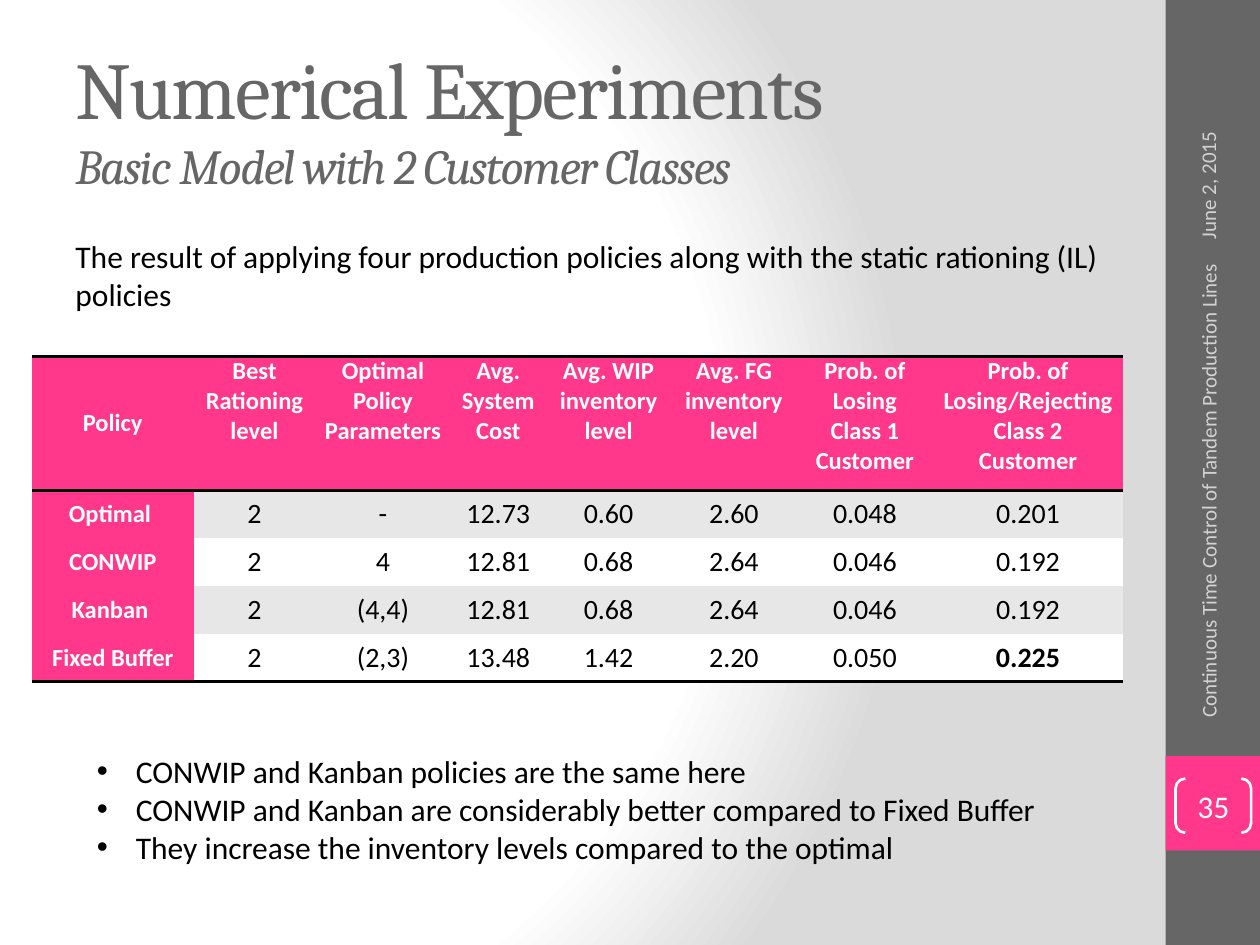
from pptx import Presentation
from pptx.dml.color import RGBColor
from pptx.enum.shapes import MSO_SHAPE as Shape
from pptx.enum.text import MSO_ANCHOR as Anchor, MSO_AUTO_SIZE as AutoSize, PP_ALIGN as Align
from pptx.oxml import parse_xml
from pptx.oxml.ns import nsdecls
from pptx.util import Inches, Pt

COLORS = {
    "pink": "FF388C", "gray": "666666", "pale": "D2D2D2", "band": "E7E7E7",
    "white": "FFFFFF", "black": "000000", "shade": "DADADA",
}
BODY, HEADING = "Calibri", "Cambria"
NO_STYLE = "{2D5ABB26-0587-4C30-8999-92F81FD0307C}"

COLUMN_WIDTHS = [1.29, 0.96, 1.08, 0.75, 1, 0.99, 1.09, 1.5]
ROW_HEIGHTS = [1.06] + [0.38] * 4
RESULTS = [
    ["Policy", "Best Rationing level", "Optimal Policy Parameters", "Avg. System Cost",
     "Avg. WIP inventory level", "Avg. FG inventory level",
     "Prob. of Losing Class 1 Customer", "Prob. of Losing/Rejecting Class 2 Customer"],
    ["Optimal ", "2", "-", "12.73", "0.60", "2.60", "0.048", "0.201"],
    ["CONWIP", "2", "4", "12.81", "0.68", "2.64", "0.046", "0.192"],
    ["Kanban ", "2", "(4,4)", "12.81", "0.68", "2.64", "0.046", "0.192"],
    ["Fixed Buffer", "2", "(2,3)", "13.48", "1.42", "2.20", "0.050", "0.225"],
]
FINDINGS = [
    "CONWIP and Kanban policies are the same here",
    "CONWIP and Kanban are considerably better compared to Fixed Buffer",
    "They increase the inventory levels compared to the optimal",
]


def rgb(color):
    return RGBColor.from_string(COLORS[color])


def inches(box):
    return [Inches(value) for value in box]


def add_run(paragraph, text, size, color, font=BODY, **style):
    run = paragraph.add_run()
    run.text = text
    values = {"name": font, "size": Pt(size), **style}
    for name, value in values.items():
        setattr(run.font, name, value)
    run.font.color.rgb = rgb(color)
    return run


def set_background(slide):
    stops = "".join(
        f'<a:gs pos="{position * 1000}"><a:srgbClr val="{COLORS[color]}"/></a:gs>'
        for position, color in [(0, "white"), (75, "white"), (100, "shade")])
    slide.element.cSld.insert(0, parse_xml(
        f'<p:bg {nsdecls("p", "a")}><p:bgPr><a:gradFill rotWithShape="1">'
        f'<a:gsLst>{stops}</a:gsLst><a:path path="circle">'
        '<a:fillToRect l="20000" t="50000" r="100000" b="50000"/></a:path>'
        '</a:gradFill><a:effectLst/></p:bgPr></p:bg>'))


def add_block(slide, box, color):
    block = slide.shapes.add_shape(Shape.RECTANGLE, *inches(box))
    block.shadow.inherit = False
    block.fill.solid()
    block.fill.fore_color.rgb = rgb(color)
    block.line.fill.background()


def add_text(slide, box, lines, size=18, color="black", align=Align.LEFT,
             anchor=Anchor.TOP, rotation=0, bullets=False):
    textbox = slide.shapes.add_textbox(*inches(box))
    textbox.rotation = rotation
    frame = textbox.text_frame
    frame.word_wrap = True
    frame.vertical_anchor = anchor
    for index, line in enumerate(lines):
        paragraph = frame.add_paragraph() if index else frame.paragraphs[0]
        paragraph.alignment = align
        add_run(paragraph, line, size, color)
        if bullets:
            props = paragraph._p.get_or_add_pPr()
            props.set("marL", str(Inches(0.31)))
            props.set("indent", str(-Inches(0.31)))
            props.append(parse_xml(f'<a:buFont {nsdecls("a")} typeface="Arial"/>'))
            props.append(parse_xml(f'<a:buChar {nsdecls("a")} char="•"/>'))


def set_title(slide):
    title = slide.shapes.title
    title.left, title.top, title.width, title.height = inches([0.5, 0.3, 8.33, 1.25])
    frame = title.text_frame
    frame.auto_size = AutoSize.NONE
    frame.vertical_anchor = Anchor.MIDDLE
    heading = frame.paragraphs[0]
    heading.alignment = Align.LEFT
    main_run = add_run(heading, "Numerical Experiments", 46, "gray", HEADING)
    heading.add_line_break()
    sub_run = add_run(heading, "Basic Model with 2 Customer Classes", 28, "gray",
                      HEADING, italic=True)
    for run in (main_run, sub_run):
        run.font._element.set("spc", "-100")


def add_rules(cell, sides):
    props = cell._tc.get_or_add_tcPr()
    for index, side in enumerate(sides):
        props.insert(index, parse_xml(
            f'<a:ln{side} {nsdecls("a")} w="{Pt(2)}"><a:solidFill>'
            f'<a:srgbClr val="{COLORS["black"]}"/></a:solidFill></a:ln{side}>'))


def format_cell(cell, text, row, column):
    label = row == 0 or column == 0
    for side, margin in {"left": 0.07, "right": 0.07, "top": 0, "bottom": 0}.items():
        setattr(cell, f"margin_{side}", Inches(margin))
    cell.vertical_anchor = Anchor.TOP if row == 0 and column else Anchor.MIDDLE
    cell.fill.solid()
    cell.fill.fore_color.rgb = rgb("pink" if label else "band" if row % 2 else "white")
    paragraph = cell.text_frame.paragraphs[0]
    paragraph.alignment = Align.CENTER
    add_run(paragraph, text, 14 if label else 16, "white" if label else "black",
            bold=label or text == "0.225")
    # Rules above and below the header, and below the last row
    add_rules(cell, {0: "TB", len(RESULTS) - 1: "B"}.get(row, ""))


def add_results(slide):
    table = slide.shapes.add_table(len(RESULTS), len(COLUMN_WIDTHS),
                                   *inches([0.25, 2.83, 8.67, 2.58])).table
    table._tbl.tblPr.find("{*}tableStyleId").text = NO_STYLE
    table.horz_banding = False
    for column, width in zip(table.columns, COLUMN_WIDTHS):
        column.width = Inches(width)
    for row, height in zip(table.rows, ROW_HEIGHTS):
        row.height = Inches(height)
    for row, texts in enumerate(RESULTS):
        for column, text in enumerate(texts):
            format_cell(table.cell(row, column), text, row, column)


def add_page_number(slide):
    bracket = slide.shapes.add_shape(Shape.DOUBLE_BRACKET, *inches([9.33, 6.18, 0.6, 0.43]))
    bracket.shadow.inherit = False
    bracket.adjustments[0] = 0.18
    bracket.fill.background()
    bracket.line.color.rgb = rgb("white")
    bracket.line.width = Pt(1.5)
    frame = bracket.text_frame
    for side in ("left", "right", "top", "bottom"):
        setattr(frame, f"margin_{side}", 0)
    frame.vertical_anchor = Anchor.MIDDLE
    frame.paragraphs[0].alignment = Align.CENTER
    add_run(frame.paragraphs[0], "35", 18, "white")


def main():
    deck = Presentation()
    deck.slide_width, deck.slide_height = Inches(10), Inches(7.5)
    slide = deck.slides.add_slide(deck.slide_layouts.get_by_name("Title Only"))
    set_background(slide)

    # Side bar
    add_block(slide, [9.25, 0, 0.75, 7.5], "gray")
    add_block(slide, [9.25, 6, 0.75, 0.75], "pink")
    side_text = {"size": 12, "color": "pale", "anchor": Anchor.MIDDLE, "rotation": 270}
    add_text(slide, [8.92, 1.13, 1.33, 0.4], ["June 2, 2015"], **side_text)
    add_text(slide, [7.63, 3.76, 3.92, 0.4],
             ["Continuous Time Control of Tandem Production Lines"],
             align=Align.RIGHT, **side_text)
    add_page_number(slide)

    # Content
    set_title(slide)
    add_text(slide, [0.5, 1.83, 8.42, 0.71],
             ["The result of applying four production policies along with "
              "the static rationing (IL) policies"])
    add_results(slide)
    add_text(slide, [0.67, 5.92, 8.25, 1.01], FINDINGS, bullets=True)

    deck.save("out.pptx")


if __name__ == "__main__":
    main()
